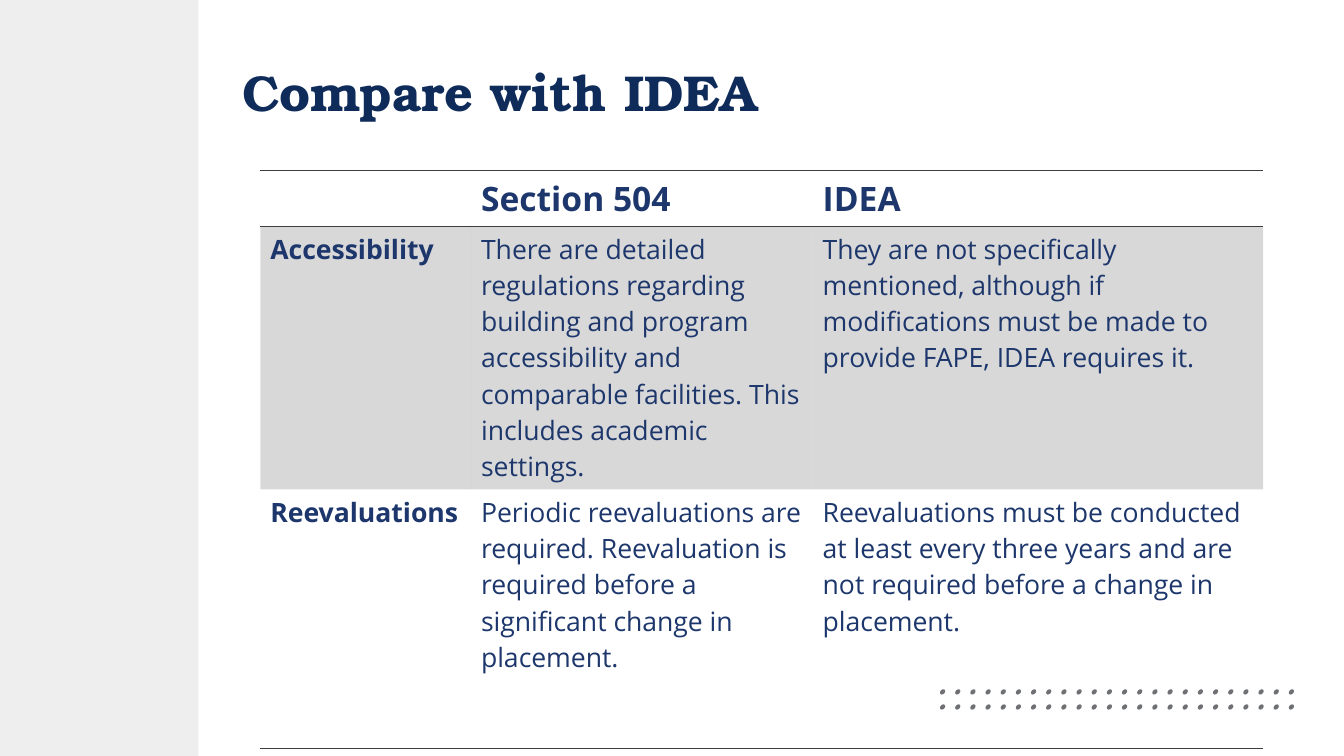
from lxml import etree
from pptx import Presentation
from pptx.dml.color import RGBColor
from pptx.enum.shapes import MSO_SHAPE
from pptx.enum.text import MSO_ANCHOR
from pptx.oxml.ns import qn
from pptx.util import Cm, Pt

RECTANGLE = MSO_SHAPE.RECTANGLE
OVAL = MSO_SHAPE.OVAL
MIDDLE = MSO_ANCHOR.MIDDLE

COLORS = {
    "background": "FFFFFF",
    "panel": "EEEEEE",
    "dot": "6E7073",
    "title": "0E2B5A",
    "text": "1D376C",
    "rule": "3C3E40",
}
TITLE_FONT = "TeX Gyre Bonum"
BODY_FONT = "Open Sans"
PLAIN_TABLE_STYLE = "{2D5ABB26-0587-4C30-8999-92F81FD0307C}"

COLUMN_WIDTHS = [5.31, 8.61, 11.35]
ROW_HEIGHTS = [1.41, 6.63, 6.54]
ROWS = [
    ["", "Section 504", "IDEA"],
    [
        "Accessibility",
        "There are detailed regulations regarding building and program "
        "accessibility and comparable facilities. This includes academic settings.",
        "They are not specifically mentioned, although if modifications "
        "must be made to provide FAPE, IDEA requires it.",
    ],
    [
        "Reevaluations",
        "Periodic reevaluations are required. Reevaluation is required "
        "before a significant change in placement.",
        "Reevaluations must be conducted at least every three years and "
        "are not required before a change in placement.",
    ],
]
RULED_SIDES = [("lnT", "lnB"), (), ("lnB",)]
SHADED_ROW = 1

DOT_COLUMNS = 24
DOT_SPAN = 8.79
DOT_TOPS = [17.38, 17.76]


def color(name):
    return RGBColor.from_string(COLORS[name])


def write(text_frame, text, size, font=BODY_FONT, color_name="text", bold=False):
    text_frame.word_wrap = True
    paragraph = text_frame.paragraphs[0]
    run = paragraph.add_run()
    run.text = text
    run.font.name = font
    run.font.size = Pt(size)
    run.font.bold = bold
    run.font.color.rgb = color(color_name)


class SlideBuilder:
    def __init__(self, presentation):
        self.slide = presentation.slides.add_slide(presentation.slide_layouts[6])
        background = self.slide.background.fill
        background.solid()
        background.fore_color.rgb = color("background")

    def shape(self, kind, left, top, width, height, color_name, rotation=0):
        shape = self.slide.shapes.add_shape(
            kind, Cm(left), Cm(top), Cm(width), Cm(height))
        shape.shadow.inherit = False
        shape.fill.solid()
        shape.fill.fore_color.rgb = color(color_name)
        shape.line.fill.background()
        shape.rotation = rotation

    def title(self, text, left, top, width, height):
        box = self.slide.shapes.add_textbox(Cm(left), Cm(top), Cm(width), Cm(height))
        box.text_frame.vertical_anchor = MIDDLE
        write(box.text_frame, text, 36, font=TITLE_FONT, color_name="title", bold=True)

    def rule(self, cell, side):
        properties = cell._tc.get_or_add_tcPr()
        line = etree.SubElement(properties, qn(f"a:{side}"), w=str(Pt(1)))
        fill = etree.SubElement(line, qn("a:solidFill"))
        etree.SubElement(fill, qn("a:srgbClr"), val=COLORS["rule"])

    def shade(self, cell, opacity):
        cell.fill.solid()
        cell.fill.fore_color.rgb = color("rule")
        fill_color = cell._tc.tcPr.find(f"{qn('a:solidFill')}/{qn('a:srgbClr')}")
        etree.SubElement(fill_color, qn("a:alpha"), val=str(opacity * 1000))

    def table(self, left, top):
        frame = self.slide.shapes.add_table(
            len(ROWS), len(COLUMN_WIDTHS), Cm(left), Cm(top),
            Cm(sum(COLUMN_WIDTHS)), Cm(sum(ROW_HEIGHTS)))
        table = frame.table
        table._tbl.tblPr.find(qn("a:tableStyleId")).text = PLAIN_TABLE_STYLE
        table.horz_banding = False
        for column, width in zip(table.columns, COLUMN_WIDTHS):
            column.width = Cm(width)
        for row_index, texts in enumerate(ROWS):
            table.rows[row_index].height = Cm(ROW_HEIGHTS[row_index])
            for column_index, text in enumerate(texts):
                cell = table.cell(row_index, column_index)
                for side in RULED_SIDES[row_index]:
                    self.rule(cell, side)
                if row_index == SHADED_ROW:
                    self.shade(cell, 20)
                else:
                    cell.fill.background()
                if text:
                    write(cell.text_frame, text, 24 if row_index == 0 else 19,
                          bold=row_index == 0 or column_index == 0)

    def dots(self, left):
        for top in DOT_TOPS:
            for index in range(DOT_COLUMNS):
                dot_left = left + index * DOT_SPAN / (DOT_COLUMNS - 1)
                self.shape(OVAL, dot_left, top, 0.15, 0.11, "dot", rotation=314.4)


def main():
    presentation = Presentation()
    presentation.slide_width = Cm(33.87)
    presentation.slide_height = Cm(19.05)
    builder = SlideBuilder(presentation)
    builder.shape(RECTANGLE, 0, 0, 5, 19.05, "panel")
    builder.dots(23.68)
    builder.title("Compare with IDEA", 5.85, 0.64, 26.7, 3.35)
    builder.table(6.56, 4.29)
    presentation.save("out.pptx")


if __name__ == "__main__":
    main()
